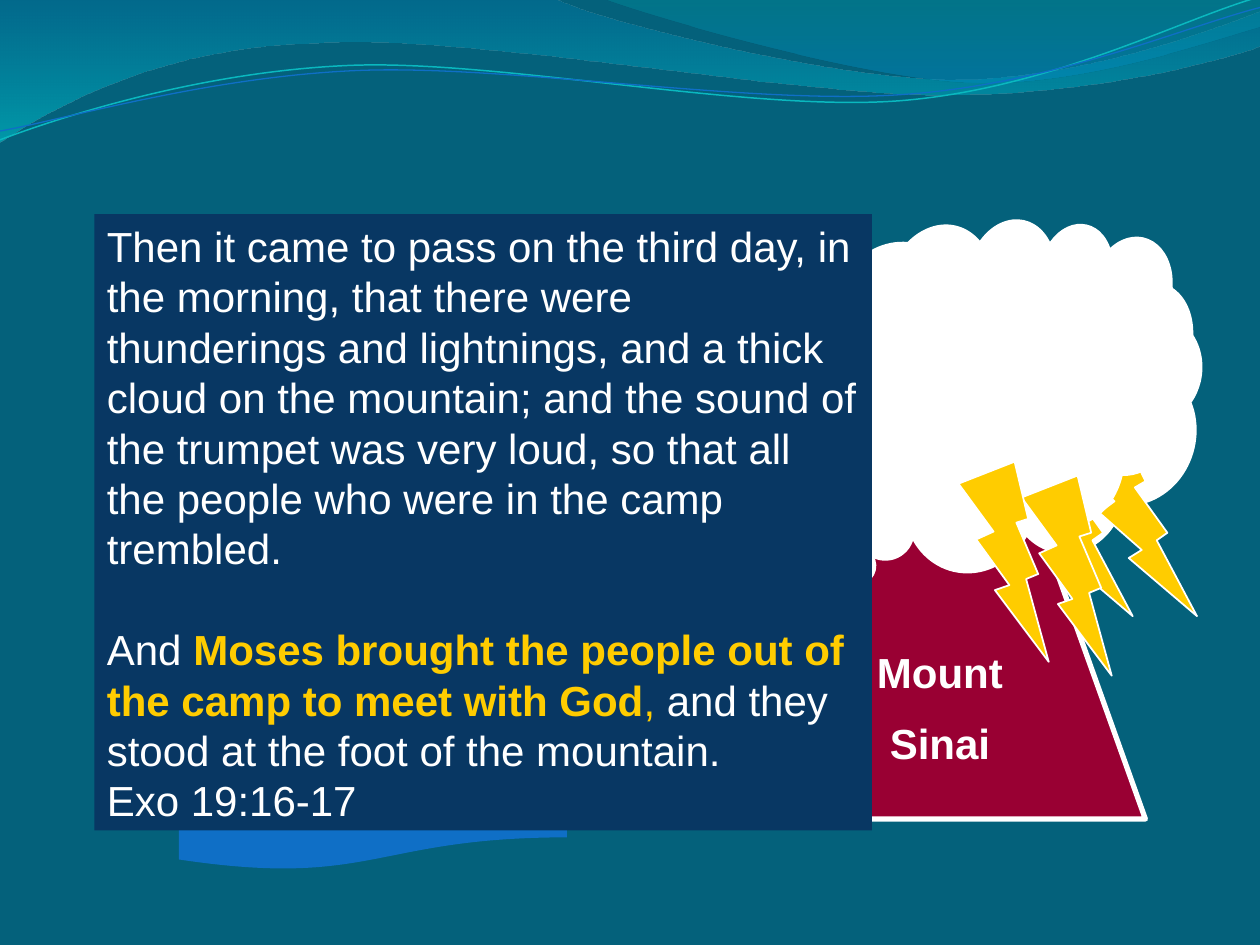
from math import cos, radians, sin

from lxml import etree
from pptx import Presentation
from pptx.dml.color import RGBColor
from pptx.enum.shapes import MSO_SHAPE
from pptx.enum.text import MSO_ANCHOR, MSO_AUTO_SIZE, PP_ALIGN
from pptx.oxml.ns import qn
from pptx.util import Inches, Pt

TRIANGLE = MSO_SHAPE.ISOSCELES_TRIANGLE
DOCUMENT = MSO_SHAPE.FLOWCHART_DOCUMENT
CLOUD = MSO_SHAPE.CLOUD_CALLOUT
BOLT = MSO_SHAPE.LIGHTNING_BOLT
RECTANGLE = MSO_SHAPE.RECTANGLE
LEFT, CENTER = PP_ALIGN.LEFT, PP_ALIGN.CENTER
TOP = MSO_ANCHOR.TOP
GROW = MSO_AUTO_SIZE.SHAPE_TO_FIT_TEXT

TEAL = RGBColor(0x04, 0x61, 0x7B)
NAVY = RGBColor(0x08, 0x37, 0x63)
BLUE = RGBColor(0x0F, 0x6F, 0xC6)
AQUA = RGBColor(0x0A, 0xB8, 0xBF)
CRIMSON = RGBColor(0x99, 0x00, 0x33)
GOLD = RGBColor(0xFF, 0xCC, 0x00)
WHITE = RGBColor(0xFF, 0xFF, 0xFF)
WAVE_TOP = RGBColor(0x00, 0x74, 0xA1)
WAVE_BOTTOM = RGBColor(0x00, 0xC6, 0xCF)
CREST_TOP = RGBColor(0x00, 0xA1, 0xA9)
CREST_BOTTOM = RGBColor(0x00, 0x8B, 0xBF)

WIDTH, HEIGHT = 10, 7.5
UNITS_PER_INCH = 1000
STRAND_TILT = -2.7

# Each outline is a start point, then line ends (2 numbers) or Bezier curves (6)
BROAD_WAVE = [
    (0, 0), (4.4, -0.01), (4.76, 0.17, 6.64, 0.63, 7.58, 0.63),
    (8.53, 0.63, 9.58, 0.26, 10, 0.09), (10.01, 0.36),
    (9.83, 0.44, 8.7, 0.76, 7.46, 0.75), (6.22, 0.75, 3.82, 0.28, 2.57, 0.34),
    (1.29, 0.36, 0.46, 0.83, -0.01, 1.13)]
CREST = [
    (4.79, -0.01), (5.09, 0.11, 6.82, 0.62, 7.69, 0.65),
    (8.56, 0.69, 9.61, 0.32, 10, 0.21), (10, 0)]
AQUA_STRAND = [
    (0, 1.11), (0.48, 0.93, 1.58, 0.57, 2.77, 0.52),
    (3.95, 0.47, 5.93, 0.89, 7.13, 0.8), (8.33, 0.71, 9.38, 0.15, 9.98, -0.02)]
BLUE_STRAND = [
    (0, 1.04), (0.47, 0.96, 1.64, 0.61, 2.83, 0.56),
    (4.03, 0.51, 5.97, 0.84, 7.17, 0.75), (8.36, 0.67, 9.41, 0.21, 10, 0.06)]


def add_outline(slide, outline, closed):
    """Draw all points as a freeform, then join each Bezier's three points."""
    points = [(segment[i] * UNITS_PER_INCH, segment[i + 1] * UNITS_PER_INCH)
              for segment in outline for i in range(0, len(segment), 2)]
    builder = slide.shapes.build_freeform(*points[0], scale=Inches(1) / UNITS_PER_INCH)
    builder.add_line_segments(points[1:], close=closed)
    shape = builder.convert_to_shape()
    shape.shadow.inherit = False
    lines = iter(shape._element.findall(".//" + qn("a:lnTo")))
    for segment in outline[1:]:
        first = next(lines)
        if len(segment) == 6:
            first.tag = qn("a:cubicBezTo")
            for line in (next(lines), next(lines)):
                first.append(line[0])
                line.getparent().remove(line)
    return shape


def add_wave(slide, outline, stops):
    """Stops are (position, colour, opacity) with shares in percent."""
    shape = add_outline(slide, outline, True)
    shape.line.fill.background()
    shape.fill.gradient()
    shape.fill.gradient_angle = 270
    elements = shape._element.spPr.findall(".//" + qn("a:gs"))
    for stop, element, (position, color, opacity) in zip(
            shape.fill.gradient_stops, elements, stops):
        stop.color.rgb = color
        element.set("pos", str(position * 1000))
        alpha = etree.SubElement(element[0], qn("a:alpha"))
        alpha.set("val", str(opacity * 1000))


def add_strand(slide, outline, center, color, weight):
    """Level the outline about its center, then tilt the whole shape."""
    cosine, sine = cos(radians(STRAND_TILT)), sin(radians(STRAND_TILT))
    center_x, center_y = center
    level = []
    for segment in outline:
        flat = ()
        for x, y in zip(segment[::2], segment[1::2]):
            across, down = x - center_x, y - center_y
            flat += (center_x + across * cosine + down * sine,
                     center_y - across * sine + down * cosine)
        level.append(flat)
    shape = add_outline(slide, level, False)
    shape.rotation = STRAND_TILT
    shape.fill.background()
    shape.line.color.rgb = color
    shape.line.width = Pt(weight)


def add_figure(slide, kind, box, fill, line=None, weight=1, rotation=0):
    shape = slide.shapes.add_shape(kind, *map(Inches, box))
    shape.shadow.inherit = False
    shape.rotation = rotation
    shape.fill.solid()
    shape.fill.fore_color.rgb = fill
    if line is None:
        shape.line.fill.background()
    else:
        shape.line.color.rgb = line
        shape.line.width = Pt(weight)
    return shape


def add_cloud(slide, box, rotation):
    cloud = add_figure(slide, CLOUD, box, WHITE, WHITE, rotation=rotation)
    cloud.adjustments[0], cloud.adjustments[1] = -0.35, 0.7


def add_bolt(slide, left, top, rotation=0):
    add_figure(slide, BOLT, (left, top, 1.01, 1.49), GOLD, WHITE, rotation=rotation)


def write_text(shape, paragraphs, align=LEFT, size=24, before=0):
    """Each paragraph is a list of (text, colour, bold) runs."""
    frame = shape.text_frame
    frame.word_wrap = True
    frame.auto_size = GROW
    frame.vertical_anchor = TOP
    for index, runs in enumerate(paragraphs):
        paragraph = frame.add_paragraph() if index else frame.paragraphs[0]
        paragraph.alignment = align
        paragraph.space_before = Pt(before)
        for text, color, bold in runs:
            run = paragraph.add_run()
            run.text = text
            run.font.name = "Arial"
            run.font.size = Pt(size)
            run.font.bold = bold
            run.font.color.rgb = color
    return frame


def build_header(slide):
    add_wave(slide, BROAD_WAVE, [(0, WAVE_TOP, 45), (100, WAVE_BOTTOM, 55)])
    add_wave(slide, CREST, [(0, CREST_TOP, 30), (80, CREST_BOTTOM, 45)])
    add_strand(slide, AQUA_STRAND, (4.99, 0.58), AQUA, 0.85)
    add_strand(slide, BLUE_STRAND, (5, 0.59), BLUE, 0.75)


def build_mountain(slide, left, top, width, height):
    add_figure(slide, TRIANGLE, (left, top, width, height), CRIMSON, WHITE, 3)
    add_figure(slide, DOCUMENT, (left - 4.75, top + 3.16, 3.08, 1.33), BLUE)
    label = slide.shapes.add_textbox(
        *map(Inches, (left + 0.5, top + 2.66, 1.58, 1.1)))
    write_text(label, [[("Mount", WHITE, True)], [("Sinai", WHITE, True)]],
               align=CENTER, before=12)


def build_storm(slide, left, top):
    # Rear cloud with its upright bolts
    add_cloud(slide, (left, top + 0.18, 3.33, 2.69), 13.4)
    for offset in (2.31, 1.8):
        add_bolt(slide, left + offset, top + 1.72)
    # Front cloud with its tilted bolts
    add_cloud(slide, (left + 0.46, top, 2.78, 2.69), 12.7)
    for across, down in ((1.81, 2.1), (1.31, 1.99)):
        add_bolt(slide, left + across, top + down, 12.7)


def build_passage(slide, left, top, width, height):
    panel = add_figure(slide, RECTANGLE, (left, top, width, height), NAVY)
    frame = write_text(panel, [
        [("Then it came to pass on the third day, in the morning, that there were "
          "thunderings and lightnings, and a thick cloud on the mountain; and the "
          "sound of the trumpet was very loud, so that all the people who were in "
          "the camp trembled.", WHITE, False)],
        [("And ", WHITE, False),
         ("Moses brought the people out of the camp to meet with God", GOLD, True),
         (",", GOLD, False),
         (" and they stood at the foot of the mountain.", WHITE, False)],
        [("Exo 19:16-17", WHITE, False)]])
    frame.paragraphs[1].space_before = Pt(28.8)


def main():
    presentation = Presentation()
    presentation.slide_width, presentation.slide_height = Inches(WIDTH), Inches(HEIGHT)
    slide = presentation.slides.add_slide(presentation.slide_layouts[6])
    slide.background.fill.solid()
    slide.background.fill.fore_color.rgb = TEAL
    build_header(slide)
    build_mountain(slide, 6.17, 2.42, 2.92, 4.08)
    build_storm(slide, 6.18, 1.68)
    build_passage(slide, 0.75, 1.7, 6.17, 4.89)
    presentation.save("out.pptx")


if __name__ == "__main__":
    main()
